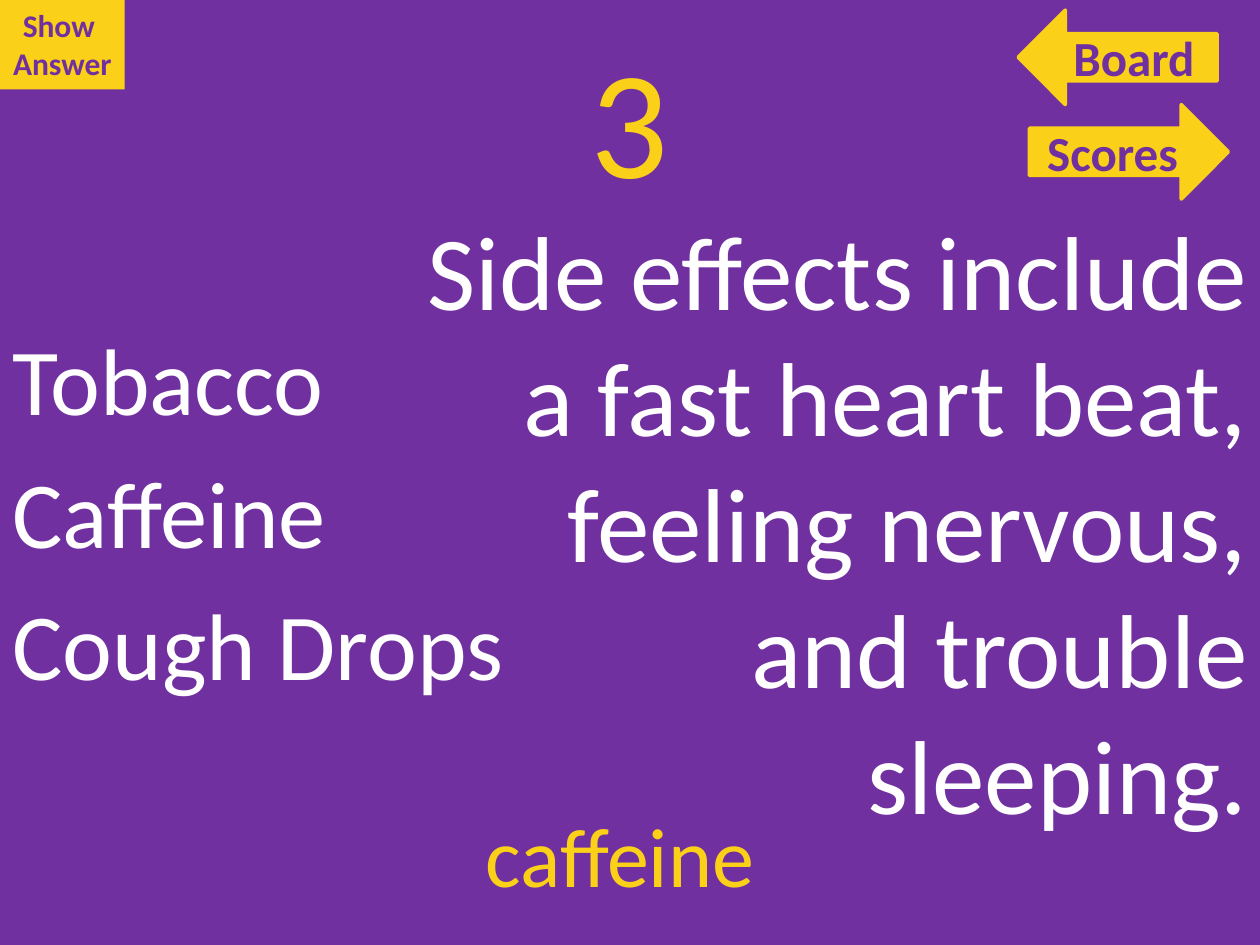
from dataclasses import dataclass

from lxml import etree
from pptx import Presentation
from pptx.dml.color import RGBColor
from pptx.enum.shapes import MSO_SHAPE
from pptx.enum.text import MSO_ANCHOR, MSO_AUTO_SIZE, PP_ALIGN
from pptx.oxml.ns import qn
from pptx.util import Inches, Pt

LEFT, CENTER, RIGHT = PP_ALIGN.LEFT, PP_ALIGN.CENTER, PP_ALIGN.RIGHT
TOP, MIDDLE = MSO_ANCHOR.TOP, MSO_ANCHOR.MIDDLE
NO_FIT, GROW = MSO_AUTO_SIZE.NONE, MSO_AUTO_SIZE.SHAPE_TO_FIT_TEXT
RECTANGLE, LEFT_ARROW = MSO_SHAPE.RECTANGLE, MSO_SHAPE.LEFT_ARROW


@dataclass(frozen=True)
class Theme:
    font: str = "Calibri"
    purple: RGBColor = RGBColor(0x70, 0x30, 0xA0)
    yellow: RGBColor = RGBColor(0xFB, 0xD0, 0x19)
    white: RGBColor = RGBColor(0xFF, 0xFF, 0xFF)
    title: int = 88
    clue: int = 60
    choice: int = 54
    answer: int = 48
    arrow_label: int = 28
    button: int = 18


THEME = Theme()


def place(shape, left, top, width, height):
    shape.left, shape.top = Inches(left), Inches(top)
    shape.width, shape.height = Inches(width), Inches(height)


def write(shape, lines, size, color, align, anchor=TOP, fit=NO_FIT, wrap=True):
    frame = shape.text_frame
    frame.text = "\n".join(lines)
    frame.word_wrap = wrap
    frame.auto_size = fit
    frame.vertical_anchor = anchor
    for para in frame.paragraphs:
        para.alignment = align
        para.font.name = THEME.font
        para.font.size = Pt(size)
        para.font.color.rgb = color
    return frame.paragraphs


def embolden(paragraphs):
    for para in paragraphs:
        para.font.bold = True
        outline = etree.Element(qn("a:ln"), w=str(Pt(1)))
        fill = etree.SubElement(outline, qn("a:solidFill"))
        etree.SubElement(fill, qn("a:srgbClr"), val=str(THEME.purple))
        para._p.pPr.find(qn("a:defRPr")).insert(0, outline)


def hang(paragraphs):
    for para in paragraphs:
        properties = para._p.pPr
        indent = Inches(0.38)
        properties.set("marL", str(indent))
        properties.set("indent", str(-indent))
        spacing = etree.Element(qn("a:spcBef"))
        etree.SubElement(spacing, qn("a:spcPct"), val="20000")
        properties.insert(0, spacing)
        properties.insert(1, etree.Element(qn("a:buNone")))


def add_text(page, bounds, lines, size, color, align, fit=GROW):
    box = page.shapes.add_textbox(*map(Inches, bounds))
    return write(box, lines, size, color, align, fit=fit)


def add_block(page, kind, bounds):
    block = page.shapes.add_shape(kind, *map(Inches, bounds))
    block.shadow.inherit = False
    block.fill.solid()
    block.fill.fore_color.rgb = THEME.yellow
    block.line.fill.background()
    return block


def add_button(page, bounds, lines):
    button = add_block(page, RECTANGLE, bounds)
    embolden(write(button, lines, THEME.button, THEME.purple, CENTER,
                   fit=GROW, wrap=False))


def add_arrow(page, label, left, top, label_left, flipped=False):
    arrow = add_block(page, LEFT_ARROW, (left, top, 1.58, 0.75))
    arrow.line.color.rgb = THEME.yellow
    arrow.line.width = Pt(2)
    if flipped:
        arrow._element.spPr.xfrm.set("flipH", "1")
    embolden(add_text(page, (label_left, top + 0.09, 1.5, 0.58), [label],
                      THEME.arrow_label, THEME.purple, CENTER))


def main():
    deck = Presentation()
    deck.slide_width, deck.slide_height = Inches(10), Inches(7.5)
    page = deck.slides.add_slide(deck.slide_layouts[1])
    page.background.fill.solid()
    page.background.fill.fore_color.rgb = THEME.purple

    title, choices = page.placeholders
    place(title, 0.5, 0.3, 9, 1.25)
    write(title, ["3"], THEME.title, THEME.yellow, CENTER, MIDDLE)
    place(choices, 0, 2.5, 4.83, 4.58)
    hang(write(choices, ["Tobacco", "Caffeine", "Cough Drops"],
               THEME.choice, THEME.white, LEFT))

    add_text(page, (0.42, 6.33, 9, 0.91), ["caffeine"],
             THEME.answer, THEME.yellow, CENTER)
    add_button(page, (0, 0, 0.99, 0.71), ["Show ", "Answer"])
    add_arrow(page, "Board", 8.08, 0.08, 8.25)
    add_arrow(page, "Scores", 8.17, 0.83, 8.08, flipped=True)
    clue = ("Side effects include a fast heart beat, "
            "feeling nervous, and trouble sleeping.")
    hang(add_text(page, (3, 1.58, 7, 4.83), [clue],
                  THEME.clue, THEME.white, RIGHT, NO_FIT))

    deck.save("out.pptx")


if __name__ == "__main__":
    main()
